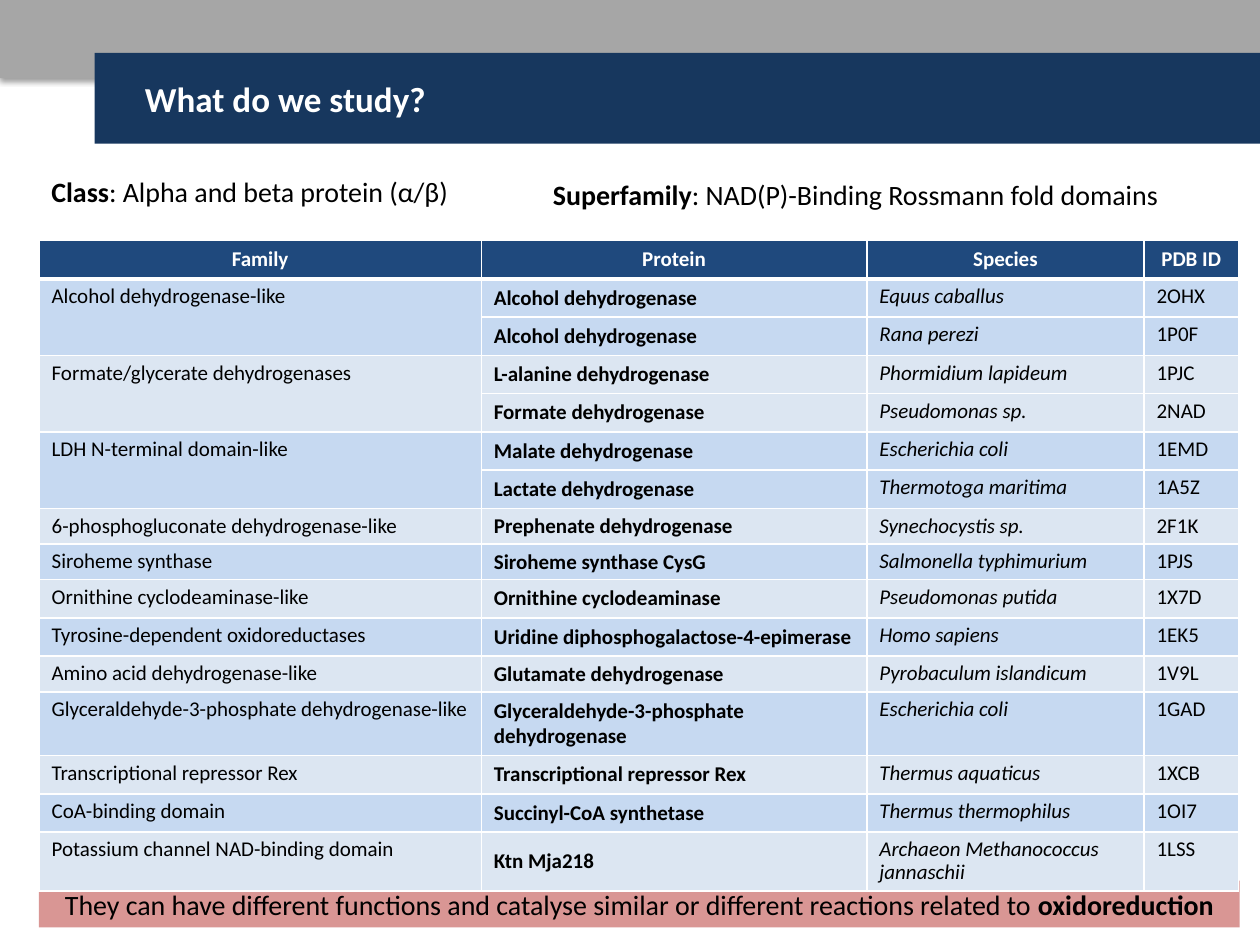
from dataclasses import dataclass

from lxml.etree import SubElement
from pptx import Presentation
from pptx.dml.color import RGBColor
from pptx.enum.shapes import MSO_SHAPE
from pptx.enum.text import MSO_ANCHOR, MSO_AUTO_SIZE, PP_ALIGN
from pptx.oxml.ns import qn
from pptx.util import Inches, Pt


@dataclass(frozen=True)
class Theme:
    font: str = "Calibri"
    title_size: int = 20
    lead_size: int = 16
    table_size: int = 12
    white: str = "FFFFFF"
    black: str = "000000"
    top_bar: str = "A6A6A6"
    title_bar: str = "17375E"
    header: str = "1F497D"
    bands: tuple = ("C6D9F1", "DCE6F2")
    banner: str = "D99694"


@dataclass(frozen=True)
class Protein:
    name: str
    species: str
    pdb_id: str
    compact: bool = False


@dataclass(frozen=True)
class Family:
    name: str
    proteins: tuple


THEME = Theme()
HEADINGS = ("Family", "Protein", "Species", "PDB ID")
COLUMN_WIDTHS = (3.51, 3.06, 2.2, 0.75)
ROW_HEIGHT = 0.21
SPECIAL_ROW_HEIGHTS = {0: 0.25, 2: 0.29, 12: 0.35, 15: 0.35}
FAMILIES = (
    Family("Alcohol dehydrogenase-like", (
        Protein("Alcohol dehydrogenase", "Equus caballus", "2OHX"),
        Protein("Alcohol dehydrogenase", "Rana perezi", "1P0F"))),
    Family("Formate/glycerate dehydrogenases", (
        Protein("L-alanine dehydrogenase", "Phormidium lapideum", "1PJC"),
        Protein("Formate dehydrogenase", "Pseudomonas sp.", "2NAD"))),
    Family("LDH N-terminal domain-like", (
        Protein("Malate dehydrogenase", "Escherichia coli", "1EMD"),
        Protein("Lactate dehydrogenase", "Thermotoga maritima", "1A5Z"))),
    Family("6-phosphogluconate dehydrogenase-like", (
        Protein("Prephenate dehydrogenase", "Synechocystis sp.", "2F1K", True),)),
    Family("Siroheme synthase", (
        Protein("Siroheme synthase CysG", "Salmonella typhimurium", "1PJS", True),)),
    Family("Ornithine cyclodeaminase-like", (
        Protein("Ornithine cyclodeaminase", "Pseudomonas putida", "1X7D"),)),
    Family("Tyrosine-dependent oxidoreductases", (
        Protein("Uridine diphosphogalactose-4-epimerase", "Homo sapiens", "1EK5"),)),
    Family("Amino acid dehydrogenase-like", (
        Protein("Glutamate dehydrogenase", "Pyrobaculum islandicum", "1V9L", True),)),
    Family("Glyceraldehyde-3-phosphate dehydrogenase-like", (
        Protein("Glyceraldehyde-3-phosphate dehydrogenase", "Escherichia coli", "1GAD"),)),
    Family("Transcriptional repressor Rex", (
        Protein("Transcriptional repressor Rex", "Thermus aquaticus", "1XCB"),)),
    Family("CoA-binding domain", (
        Protein("Succinyl-CoA synthetase", "Thermus thermophilus", "1OI7"),)),
    Family("Potassium channel NAD-binding domain", (
        Protein("Ktn Mja218", "Archaeon Methanococcus jannaschii", "1LSS"),)),
)


def add_span(para, text: str, size: int, color: str,
             bold: bool = False, italic: bool = False) -> None:
    span = para.add_run()
    span.text = text
    span.font.name = THEME.font
    span.font.size = Pt(size)
    span.font.color.rgb = RGBColor.from_string(color)
    span.font.bold = bold
    span.font.italic = italic


def add_bar(shapes, left: float, top: float, width: float, height: float, color: str):
    bar = shapes.add_shape(MSO_SHAPE.RECTANGLE, Inches(left), Inches(top),
                           Inches(width), Inches(height))
    bar.shadow.inherit = False
    bar.fill.solid()
    bar.fill.fore_color.rgb = RGBColor.from_string(color)
    bar.line.fill.background()
    bar.text_frame.vertical_anchor = MSO_ANCHOR.MIDDLE
    return bar


def add_soft_shadow(bar) -> None:
    effects = bar.fill._xPr.find(qn("a:effectLst"))
    shadow = SubElement(effects, qn("a:outerShdw"), blurRad=str(Pt(3.1)),
                        dist=str(Pt(1.6)), dir="5400000", rotWithShape="0")
    color = SubElement(shadow, qn("a:srgbClr"), val=THEME.black)
    SubElement(color, qn("a:alpha"), val="38000")


def add_heading(shapes) -> None:
    heading = shapes.add_group_shape().shapes
    add_soft_shadow(add_bar(heading, 0, 0, 10.02, 0.62, THEME.top_bar))
    title = add_bar(heading, 0.75, 0.42, 9.29, 0.72, THEME.title_bar)
    title.text_frame.margin_left = Inches(0.4)
    para = title.text_frame.paragraphs[0]
    para.alignment = PP_ALIGN.LEFT
    add_span(para, "What do we study?", THEME.title_size, THEME.white, bold=True)


def add_label(shapes, left: float, top: float, width: float, term: str, text: str) -> None:
    box = shapes.add_textbox(Inches(left), Inches(top), Inches(width), Inches(0.37))
    box.text_frame.word_wrap = False
    box.text_frame.auto_size = MSO_AUTO_SIZE.SHAPE_TO_FIT_TEXT
    para = box.text_frame.paragraphs[0]
    add_span(para, term, THEME.lead_size, THEME.black, bold=True)
    add_span(para, f": {text}", THEME.lead_size, THEME.black)


def style_cell(cell, color: str, top_line: float = 1, bottom_line: float = 1) -> None:
    """Set the white borders first, since the fill must follow them."""
    properties = cell._tc.get_or_add_tcPr()
    for side, width in (("L", 1), ("R", 1), ("T", top_line), ("B", bottom_line)):
        line = SubElement(properties, qn(f"a:ln{side}"), w=str(Pt(width)))
        fill = SubElement(line, qn("a:solidFill"))
        SubElement(fill, qn("a:srgbClr"), val=THEME.white)
    cell.fill.solid()
    cell.fill.fore_color.rgb = RGBColor.from_string(color)


def fill_header(table) -> None:
    for column, text in enumerate(HEADINGS):
        cell = table.cell(0, column)
        style_cell(cell, THEME.header, bottom_line=3)
        para = cell.text_frame.paragraphs[0]
        para.alignment = PP_ALIGN.CENTER
        add_span(para, text, THEME.table_size, THEME.white, bold=True)


def write_body(cell, text: str, italic: bool = False) -> None:
    para = cell.text_frame.paragraphs[0]
    para.line_spacing = 0.9
    add_span(para, text, THEME.table_size, THEME.black, italic=italic)


def fill_protein(table, row: int, protein: Protein, color: str) -> None:
    for column in range(len(HEADINGS)):
        style_cell(table.cell(row, column), color, top_line=3 if row == 1 else 1)
    name_cell = table.cell(row, 1)
    name_cell.vertical_anchor = MSO_ANCHOR.MIDDLE
    if protein.compact:
        name_cell.margin_top = Inches(0.01)
        name_cell.margin_bottom = 0
    add_span(name_cell.text_frame.paragraphs[0], protein.name,
             THEME.table_size, THEME.black, bold=True)
    write_body(table.cell(row, 2), protein.species, italic=True)
    write_body(table.cell(row, 3), protein.pdb_id)


def add_family_table(shapes) -> None:
    row_count = 1 + sum(len(family.proteins) for family in FAMILIES)
    frame = shapes.add_table(row_count, len(HEADINGS), Inches(0.31), Inches(1.91),
                             Inches(9.53), Inches(5.1))
    table = frame.table
    table.horz_banding = False
    for column, width in zip(table.columns, COLUMN_WIDTHS):
        column.width = Inches(width)
    for index, table_row in enumerate(table.rows):
        table_row.height = Inches(SPECIAL_ROW_HEIGHTS.get(index, ROW_HEIGHT))
    frame.height = Inches(5.1)

    fill_header(table)
    row = 1
    for index, family in enumerate(FAMILIES):
        first_row = row
        for protein in family.proteins:
            fill_protein(table, row, protein, THEME.bands[index % 2])
            row += 1
        family_cell = table.cell(first_row, 0)
        if len(family.proteins) > 1:
            family_cell.merge(table.cell(row - 1, 0))
        write_body(family_cell, family.name)


def add_banner(shapes) -> None:
    banner = add_bar(shapes, 0.31, 6.99, 9.53, 0.37, THEME.banner)
    para = banner.text_frame.paragraphs[0]
    para.alignment = PP_ALIGN.CENTER
    add_span(para, "They can have different functions and catalyse similar or different "
             "reactions related to ", THEME.lead_size, THEME.black)
    add_span(para, "oxidoreduction", THEME.lead_size, THEME.black, bold=True)


def main() -> None:
    deck = Presentation()
    deck.slide_width, deck.slide_height = Inches(10), Inches(7.5)
    page = deck.slides.add_slide(deck.slide_layouts[6])
    add_banner(page.shapes)
    add_family_table(page.shapes)
    add_heading(page.shapes)
    add_label(page.shapes, 0.31, 1.34, 3.4, "Class", "Alpha and beta protein (α/β)")
    add_label(page.shapes, 4.29, 1.36, 5.08, "Superfamily",
              "NAD(P)-Binding Rossmann fold domains")
    deck.save("out.pptx")


if __name__ == "__main__":
    main()
